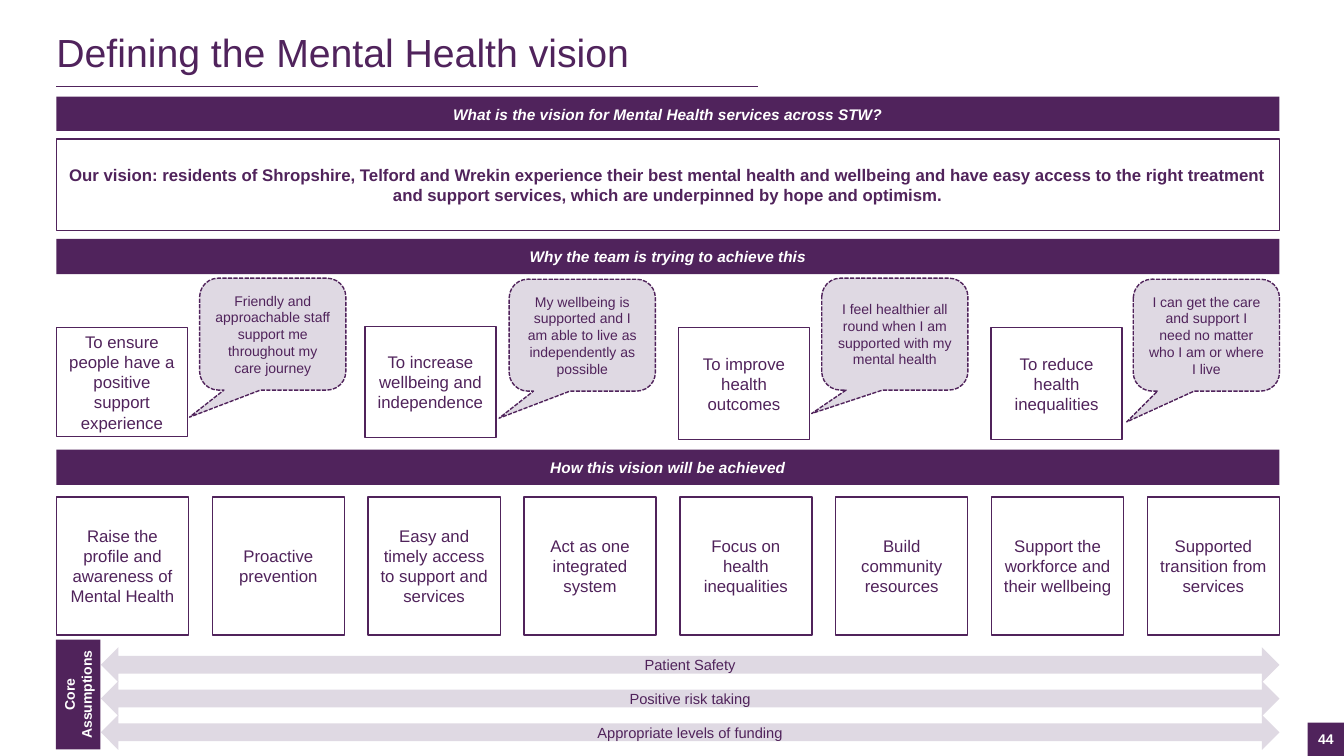
import pptx
import pptx.util
import pptx.dml.color
import pptx.enum.dml
import pptx.enum.shapes
import pptx.enum.text
import pptx.oxml.ns
import lxml.etree

Inches = pptx.util.Inches
Shape = pptx.enum.shapes.MSO_SHAPE
Align = pptx.enum.text.PP_ALIGN
Anchor = pptx.enum.text.MSO_ANCHOR
AutoSize = pptx.enum.text.MSO_AUTO_SIZE

COLOURS = {"purple": "50235C", "plum": "50235B", "lilac": "DFD9E3", "white": "FFFFFF"}
LEFT, WIDTH = 0.56, 12.13

BANNERS = [
    (0.96, 0.34, "What is the vision for Mental Health services across STW?"),
    (2.37, 0.35, "Why the team is trying to achieve this"),
    (4.46, 0.35, "How this vision will be achieved"),
]
VISION = (
    "Our vision: residents of Shropshire, Telford and Wrekin experience their best "
    "mental health and wellbeing and have easy access to the right treatment and "
    "support services, which are underpinned by hope and optimism."
)
AIMS = [
    ((0.56, 3.25, 1.3, 1.08), "To ensure people have a positive support experience",
     (1.98, 2.76), (-0.569, 0.742),
     "Friendly and approachable staff support me throughout my care journey"),
    ((3.62, 3.24, 1.3, 1.1), "To increase wellbeing and independence",
     (5.05, 2.77), (-0.569, 0.742),
     "My wellbeing is supported and I am able to live as independently as possible"),
    ((6.73, 3.25, 1.3, 1.11), "To improve health outcomes",
     (8.15, 2.76), (-0.569, 0.71),
     "I feel healthier all round when I am supported with my mental health"),
    ((9.83, 3.25, 1.3, 1.11), "To reduce health inequalities",
     (11.24, 2.77), (-0.545, 0.775),
     "I can get the care and support I need no matter who I am or where I live"),
]
ACTIONS = [
    "Raise the profile and awareness of Mental Health",
    "Proactive prevention",
    "Easy and timely access to support and services",
    "Act as one integrated system",
    "Focus on health inequalities",
    "Build community resources",
    "Support the workforce and their wellbeing",
    "Supported transition from services",
]
ASSUMPTIONS = ["Patient Safety", "Positive risk taking", "Appropriate levels of funding"]


def colour(name):
    return pptx.dml.color.RGBColor.from_string(COLOURS[name])


def format_font(font, size, ink, **styles):
    values = {"name": "Arial", "size": pptx.util.Pt(size), **styles}
    for name, value in values.items():
        setattr(font, name, value)
    font.color.rgb = colour(ink)


def set_frame(frame, margins=(0.1, 0.05), **values):
    side, end = (Inches(margin) for margin in margins)
    settings = {"margin_left": side, "margin_right": side, "margin_top": end,
                "margin_bottom": end, "word_wrap": True,
                "vertical_anchor": Anchor.MIDDLE, **values}
    for name, value in settings.items():
        setattr(frame, name, value)


def add_block(page, kind, place, fill, lines, size, ink="plum", border=None,
              margins=(0.1, 0.05), **styles):
    block = page.shapes.add_shape(kind, *map(Inches, place))
    block.shadow.inherit = False
    block.fill.solid()
    block.fill.fore_color.rgb = colour(fill)
    if border:
        block.line.color.rgb = colour(border)
        block.line.width = pptx.util.Pt(1)
    else:
        block.line.fill.background()
    frame = block.text_frame
    set_frame(frame, margins)
    for index, line in enumerate(lines):
        para = frame.add_paragraph() if index else frame.paragraphs[0]
        para.alignment = Align.CENTER
        span = para.add_run()
        span.text = line
        format_font(span.font, size, ink, **styles)
    return block


def add_title(page, text):
    title = page.shapes.title
    title.left, title.top, title.width, title.height = map(Inches, (LEFT, 0.33, 10.28, 0.47))
    set_frame(title.text_frame, (0, 0), vertical_anchor=Anchor.TOP, auto_size=AutoSize.NONE)
    para = title.text_frame.paragraphs[0]
    para.alignment = Align.LEFT
    para.line_spacing = 0.9
    span = para.add_run()
    span.text = text
    format_font(span.font, 28, "purple")


def add_rule(page):
    rule = page.shapes.add_connector(
        pptx.enum.shapes.MSO_CONNECTOR.STRAIGHT, *map(Inches, (LEFT, 0.86, 7.52, 0.86)))
    rule.line.color.rgb = colour("purple")
    rule.line.width = pptx.util.Pt(0.5)
    lxml.etree.SubElement(rule._element.spPr, pptx.oxml.ns.qn("a:effectLst"))


def add_box(page, place, text, **styles):
    add_block(page, Shape.RECTANGLE, place, "white", [text], 12, border="plum", **styles)


def add_callout(page, corner, pointer, text):
    callout = add_block(page, Shape.ROUNDED_RECTANGULAR_CALLOUT, (*corner, 1.45, 1.11),
                        "lilac", [text], 10, border="plum")
    callout.line.dash_style = pptx.enum.dml.MSO_LINE.SQUARE_DOT
    for index, value in enumerate((*pointer, 0.167)):
        callout.adjustments[index] = value


def add_assumptions(page):
    for index, text in enumerate(ASSUMPTIONS):
        add_block(page, Shape.LEFT_RIGHT_ARROW, (1, 6.42 + index * 0.335, 11.69, 0.35),
                  "lilac", [text], 10.5, margins=(0.04, 0.05))
    label = add_block(page, Shape.RECTANGLE, (0.23, 6.67, 1.09, 0.44), "plum",
                      ["Core", "Assumptions"], 10, "white", bold=True)
    label.rotation = 270
    set_frame(label.text_frame, word_wrap=False, vertical_anchor=Anchor.TOP,
              auto_size=AutoSize.SHAPE_TO_FIT_TEXT)


def main():
    """Build the Mental Health vision slide and save it."""
    deck = pptx.Presentation()
    deck.slide_width, deck.slide_height = Inches(13.33), Inches(7.5)
    page = deck.slides.add_slide(deck.slide_layouts[5])

    add_title(page, "Defining the Mental Health vision")
    add_rule(page)
    add_block(page, Shape.RECTANGLE, (12.97, 7.17, 0.36, 0.33), "purple", ["44"], 10,
              "white", margins=(0, 0), bold=True)
    for top, height, text in BANNERS:
        add_block(page, Shape.RECTANGLE, (LEFT, top, WIDTH, height), "purple", [text], 11,
                  "white", bold=True, italic=True)
    add_box(page, (LEFT, 1.38, WIDTH, 0.91), VISION, bold=True)
    for place, aim, corner, pointer, quote in AIMS:
        add_box(page, place, aim)
        add_callout(page, corner, pointer, quote)
    action_width = 1.31
    step = (WIDTH - action_width) / (len(ACTIONS) - 1)
    for index, action in enumerate(ACTIONS):
        add_box(page, (LEFT + index * step, 4.93, action_width, 1.37), action)
    add_assumptions(page)

    deck.save("out.pptx")


if __name__ == "__main__":
    main()
